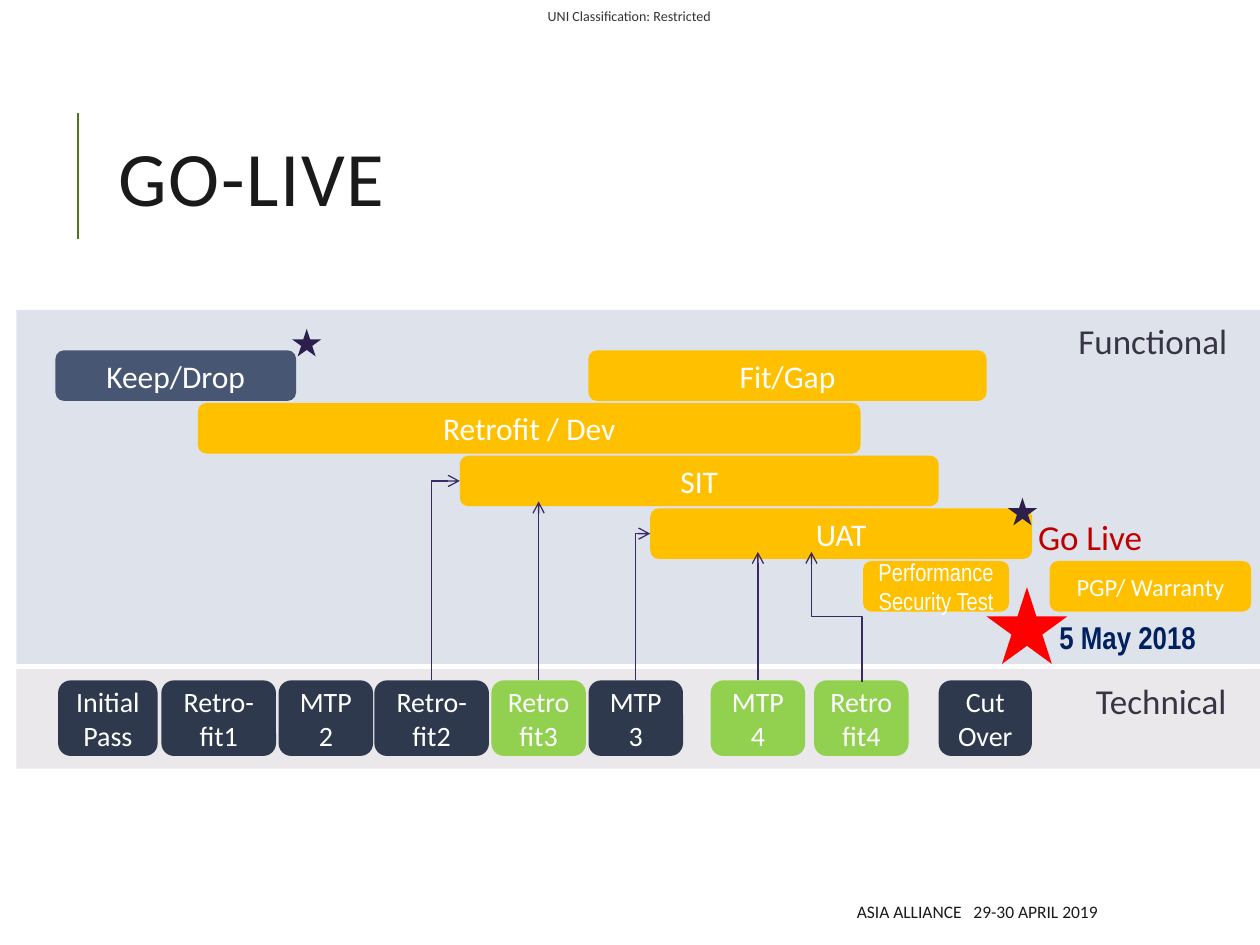
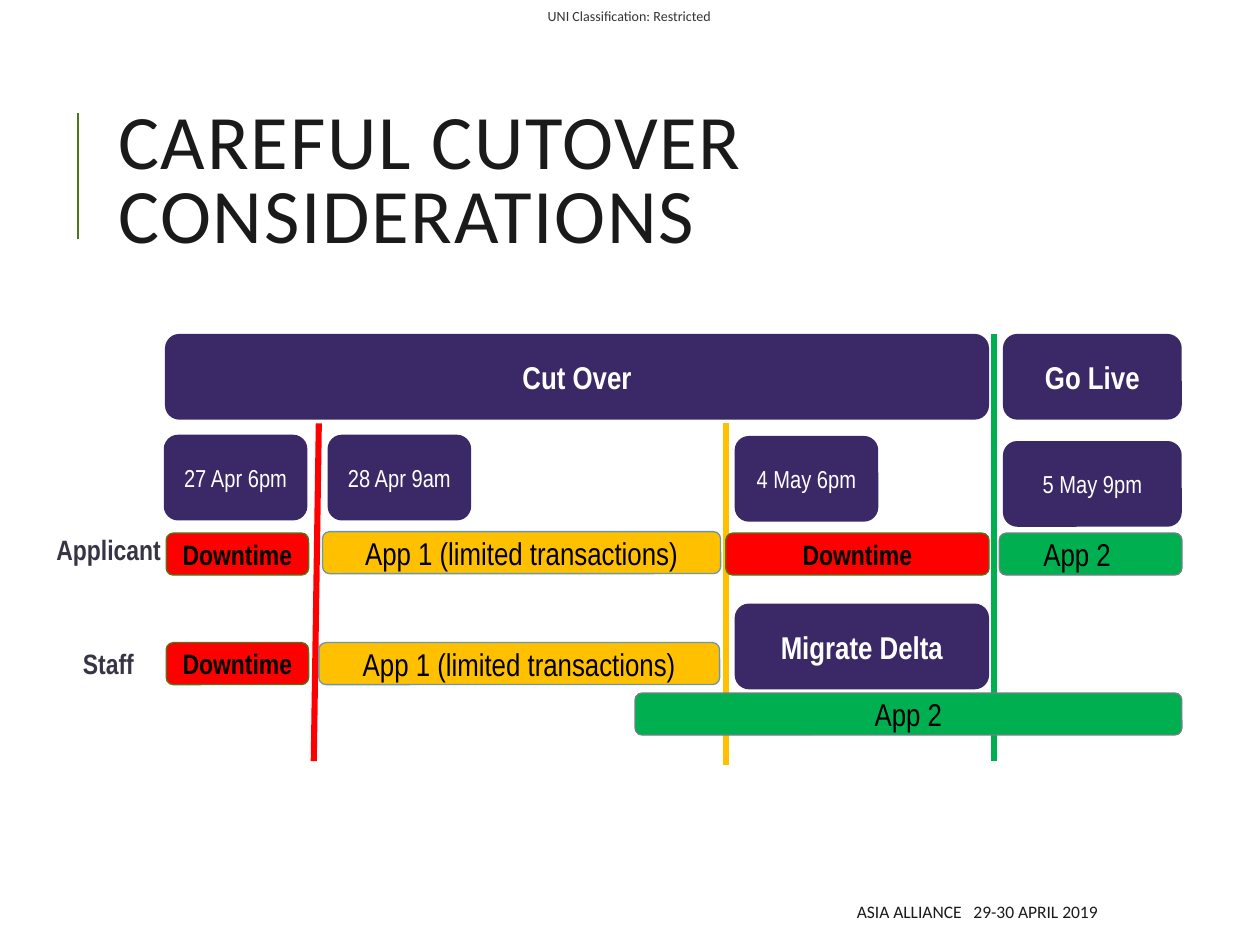
from lxml import etree
from pptx import Presentation
from pptx.dml.color import RGBColor
from pptx.enum import shapes, text
from pptx.oxml.ns import qn
from pptx.util import Pt

COLORS = {
    "ink": "1A1A1A", "grey": "333333", "label": "373545", "white": "FFFFFF", "black": "000000",
    "rule": "4E7817", "functional": "DEE3EB", "technical": "EAE8EA", "slate": "465673",
    "amber": "FFC000", "navy": "2E394D", "lime": "92D050", "purple": "3B2867", "star": "2C1E4D",
    "red": "FF0000", "crimson": "C00000", "date": "002060", "green": "00B050",
    "amber line": "6997AF", "green line": "6F8183",
}
NARROW = "Arial Narrow"
BODY = "Calibri"
ROUNDED = shapes.MSO_SHAPE.ROUNDED_RECTANGLE
STAR = shapes.MSO_SHAPE.STAR_5_POINT
ELBOW = shapes.MSO_CONNECTOR.ELBOW
STRAIGHT = shapes.MSO_CONNECTOR.STRAIGHT
CENTER = text.PP_ALIGN.CENTER
LEFT = text.PP_ALIGN.LEFT
RIGHT = text.PP_ALIGN.RIGHT
TOP, LEFT_SIDE = 0, 1


def color(name):
    return RGBColor.from_string(COLORS[name])


def format_text(shape, size, ink, font=BODY, bold=False, align=CENTER):
    frame = shape.text_frame
    frame.vertical_anchor = text.MSO_ANCHOR.MIDDLE
    frame.word_wrap = True
    for paragraph in frame.paragraphs:
        paragraph.alignment = align
        for run in paragraph.runs:
            run.font.size = Pt(size)
            run.font.name = font
            run.font.bold = bold
            run.font.color.rgb = color(ink)


def space_letters(run, points):
    run.font._element.set("spc", str(int(points * 100)))


def add_text(slide, box, words, size, ink, **style):
    shape = slide.shapes.add_textbox(*map(Pt, box))
    shape.text_frame.text = words
    format_text(shape, size, ink, **style)
    return shape


def add_label(slide, box, words, size, ink, **style):
    """Add one unwrapped line of text in a box that fits it."""
    shape = add_text(slide, box, words, size, ink, align=LEFT, **style)
    shape.text_frame.vertical_anchor = text.MSO_ANCHOR.TOP
    shape.text_frame.word_wrap = False
    shape.text_frame.auto_size = text.MSO_AUTO_SIZE.SHAPE_TO_FIT_TEXT


def add_block(slide, kind, box, fill, line=None):
    shape = slide.shapes.add_shape(kind, *map(Pt, box))
    shape.shadow.inherit = False
    shape.fill.solid()
    shape.fill.fore_color.rgb = color(fill)
    if line:
        shape.line.color.rgb = color(line)
        shape.line.width = Pt(0.75)
    else:
        shape.line.fill.background()
    return shape


def add_box(slide, box, fill, words, size, ink="white", line=None, **style):
    shape = add_block(slide, ROUNDED, box, fill, line)
    shape.text_frame.text = words
    format_text(shape, size, ink, **style)
    return shape


def add_line(slide, kind, start, end, line, width):
    connector = slide.shapes.add_connector(kind, *map(Pt, (*start, *end)))
    connector.line.color.rgb = color(line)
    connector.line.width = Pt(width)
    etree.SubElement(connector._element.spPr, qn("a:effectLst"))
    return connector


def add_arrow(slide, kind, start, end, tip="tailEnd"):
    connector = add_line(slide, kind, start, end, "purple", 0.75)
    etree.SubElement(connector.line._get_or_add_ln(), qn(f"a:{tip}"), type="arrow")
    return connector


def add_side_arrow(slide, source, target):
    """Rise from the top of source, then turn right into the left side of target."""
    corner = (0, 0)
    connector = add_arrow(slide, ELBOW, corner, corner, "headEnd")
    connector.begin_connect(target, LEFT_SIDE)
    connector.end_connect(source, TOP)
    connector._element.spPr.find(qn("a:prstGeom")).set("prst", "bentConnector2")


def add_rising_arrow(slide, source, end_y):
    x = (source.left + source.width / 2) / Pt(1)
    connector = add_arrow(slide, STRAIGHT, (x, source.top / Pt(1)), (x, end_y))
    connector.begin_connect(source, TOP)


def add_stepped_arrow(slide, start, end):
    """Rise, step left halfway and rise again: an elbow turned by 270 degrees."""
    center_x, center_y = (start[0] + end[0]) / 2, (start[1] + end[1]) / 2
    half_rise, half_step = (start[1] - end[1]) / 2, (start[0] - end[0]) / 2
    connector = add_arrow(slide, ELBOW,
                          (center_x - half_rise, center_y + half_step),
                          (center_x + half_rise, center_y - half_step))
    connector._element.spPr.find(qn("a:xfrm")).set("rot", str(270 * 60000))


def add_frame(presentation, title):
    """Start a slide with the classification, rule, title and footer."""
    slide = presentation.slides.add_slide(presentation.slide_layouts[6])
    add_line(slide, STRAIGHT, (44.6, 136.8), (44.6, 64.8), "rule", 1.5)
    banner = add_text(slide, (301, 0, 117.4, 18), "UNI Classification: Restricted", 8, "grey")
    frame = banner.text_frame
    frame.margin_left = frame.margin_right = frame.margin_top = frame.margin_bottom = 0

    heading = add_text(slide, (60.5, 46.1, 573.8, 118), title, 44, "ink", align=LEFT)
    paragraph = heading.text_frame.paragraphs[0]
    paragraph.line_spacing = 0.8
    space_letters(paragraph.runs[0], 1)

    footer = add_text(slide, (285.8, 509.8, 348.5, 21.6), "ASIA ALLIANCE", 10, "ink")
    for words in (" ", "29-30 APRIL 2019"):
        footer.text_frame.paragraphs[0].add_run().text = words
    format_text(footer, 10, "ink", align=RIGHT)
    space_letters(footer.text_frame.paragraphs[0].runs[1], 4.5)
    return slide


def add_functional_band(slide, box):
    """Draw the functional phases and return their bars by name."""
    left, top = box[:2]
    add_block(slide, shapes.MSO_SHAPE.RECTANGLE, box, "functional")
    phases = [  # name, row, left, width, fill, size, font
        ("Keep/Drop", 0, 22.3, 137.5, "slate", 18, BODY),
        ("Fit/Gap", 0, 326.9, 227.5, "amber", 18, BODY),
        ("Retrofit / Dev", 1, 103.7, 378.7, "amber", 18, BODY),
        ("SIT", 2, 253.4, 273.6, "amber", 18, BODY),
        ("UAT", 3, 362.2, 218.2, "amber", 18, BODY),
        ("Performance Security Test", 4, 483.8, 83.5, "amber", 14, NARROW),
        ("PGP/ Warranty", 4, 590.4, 115.2, "amber", 14, BODY),
    ]
    bars = {}
    for name, row, x, width, fill, size, font in phases:
        place = (left + x, top + 23.1 + 30.1 * row, width, 28.9)
        bars[name] = add_box(slide, place, fill, name, size, font=font)
    for x, y, width, height, fill in ((157.6, 10.8, 16.6, 15.8, "star"),
                                      (566.6, 107.3, 16.6, 15.8, "star"),
                                      (554.4, 158.4, 46.1, 43.9, "red")):
        add_block(slide, STAR, (left + x, top + y, width, height), fill)
    add_label(slide, (left + 576.7, top + 113.8, 84.2, 31.7), "Go Live", 20, "crimson")
    add_label(slide, (left + 588.9, top + 172.8, 92.9, 28.8), "5 May 2018", 18, "date",
              font=NARROW, bold=True)
    add_label(slide, (left + 599.7, top + 2.2, 108, 31.7), "Functional", 20, "label")
    return bars


def add_technical_band(slide, box):
    """Draw the technical steps and return their boxes by name."""
    left, top = box[:2]
    add_block(slide, shapes.MSO_SHAPE.RECTANGLE, box, "technical")
    steps = [  # name, left, width, fill
        ("Initial Pass", 23.8, 56.9, "navy"), ("Retro-fit1", 82.8, 65.5, "navy"),
        ("MTP 2", 149.8, 54, "navy"), ("Retro-fit2", 204.5, 65.5, "navy"),
        ("Retrofit3", 271.4, 54, "lime"), ("MTP 3", 326.9, 54, "navy"),
        ("MTP 4", 396.7, 54, "lime"), ("Retrofit4", 455.8, 54, "lime"),
        ("Cut Over", 527, 53.3, "navy"),
    ]
    boxes = {name: add_box(slide, (left + x, top + 6.5, width, 43.2), fill, name, 16)
             for name, x, width, fill in steps}
    add_label(slide, (left + 609.8, top + 2.2, 98.6, 31.7), "Technical", 20, "label")
    return boxes


def add_go_live_slide(presentation):
    slide = add_frame(presentation, "GO-LIVE")
    phases = add_functional_band(slide, (9.4, 177.1, 710.6, 202.3))
    steps = add_technical_band(slide, (9.4, 382.3, 710.6, 56.9))
    add_side_arrow(slide, steps["Retro-fit2"], phases["SIT"])
    add_side_arrow(slide, steps["MTP 3"], phases["UAT"])
    add_rising_arrow(slide, steps["Retrofit3"], 286.6)
    add_rising_arrow(slide, steps["MTP 4"], 315.4)
    add_stepped_arrow(slide, (492.5, 389.5), (463.7, 315.4))


def add_cutover_timeline(slide, left, top):
    for x1, y1, x2, y2, fill in ((542.9, 0, 542.9, 244.1, "green"),
                                 (389.5, 51.1, 389.5, 246.2, "amber"),
                                 (157, 51.1, 154.1, 244.1, "red")):
        add_line(slide, STRAIGHT, (left + x1, top + y1), (left + x2, top + y2), fill, 3.5)

    for name, x, y, width in (("Applicant", 0, 110.2, 74.9), ("Staff", 15.1, 175, 43.9)):
        add_label(slide, (left + x, top + y, width, 26.6), name, 16, "label",
                  font=NARROW, bold=True)

    bar_styles = {  # fill, line, size, bold
        "Downtime": ("red", "rule", 16, True),
        "App 1 (limited transactions)": ("amber", "amber line", 18, False),
        "App 2": ("green", "green line", 18, False),
    }
    downtime, limited, upgraded = bar_styles
    bars = [  # name, left, top, width, alignment
        (downtime, 69.8, 113.8, 81.4, CENTER), (limited, 159.1, 113, 227.5, CENTER),
        (downtime, 389.5, 113.8, 150.5, CENTER), (upgraded, 545.8, 113.8, 104.4, LEFT),
        (downtime, 69.8, 176.4, 81.4, CENTER), (limited, 157, 176.4, 229, CENTER),
        (upgraded, 337.7, 205.2, 312.5, CENTER),
    ]
    for name, x, y, width, align in bars:
        fill, line, size, bold = bar_styles[name]
        bar = add_box(slide, (left + x, top + y, width, 24), fill, name, size, "black",
                      line, font=NARROW, bold=bold, align=align)
        if align == LEFT:
            bar.text_frame.margin_left = Pt(24)

    milestones = [  # name, left, top, width, is a heading
        ("Cut Over", 69.1, 0, 470.9, True), ("Go Live", 547.9, 0, 102.2, True),
        ("27 Apr 6pm", 68.4, 57.6, 82.1, False), ("28 Apr 9am", 162, 57.6, 82.1, False),
        ("4 May 6pm", 394.6, 58.3, 82.1, False), ("5 May 9pm", 547.9, 61.2, 102.2, False),
        ("Migrate Delta", 394.6, 154.1, 145.4, True),
    ]
    for name, x, y, width, heading in milestones:
        add_box(slide, (left + x, top + y, width, 49), "purple", name,
                18 if heading else 14, font=NARROW, bold=heading)


def add_cutover_slide(presentation):
    slide = add_frame(presentation, "CAREFUL CUTOVER CONSIDERATIONS")
    add_cutover_timeline(slide, 25.2, 190.8)


def main():
    presentation = Presentation()
    presentation.slide_width, presentation.slide_height = Pt(720), Pt(540)
    add_go_live_slide(presentation)
    add_cutover_slide(presentation)
    presentation.save("out.pptx")


if __name__ == "__main__":
    main()
